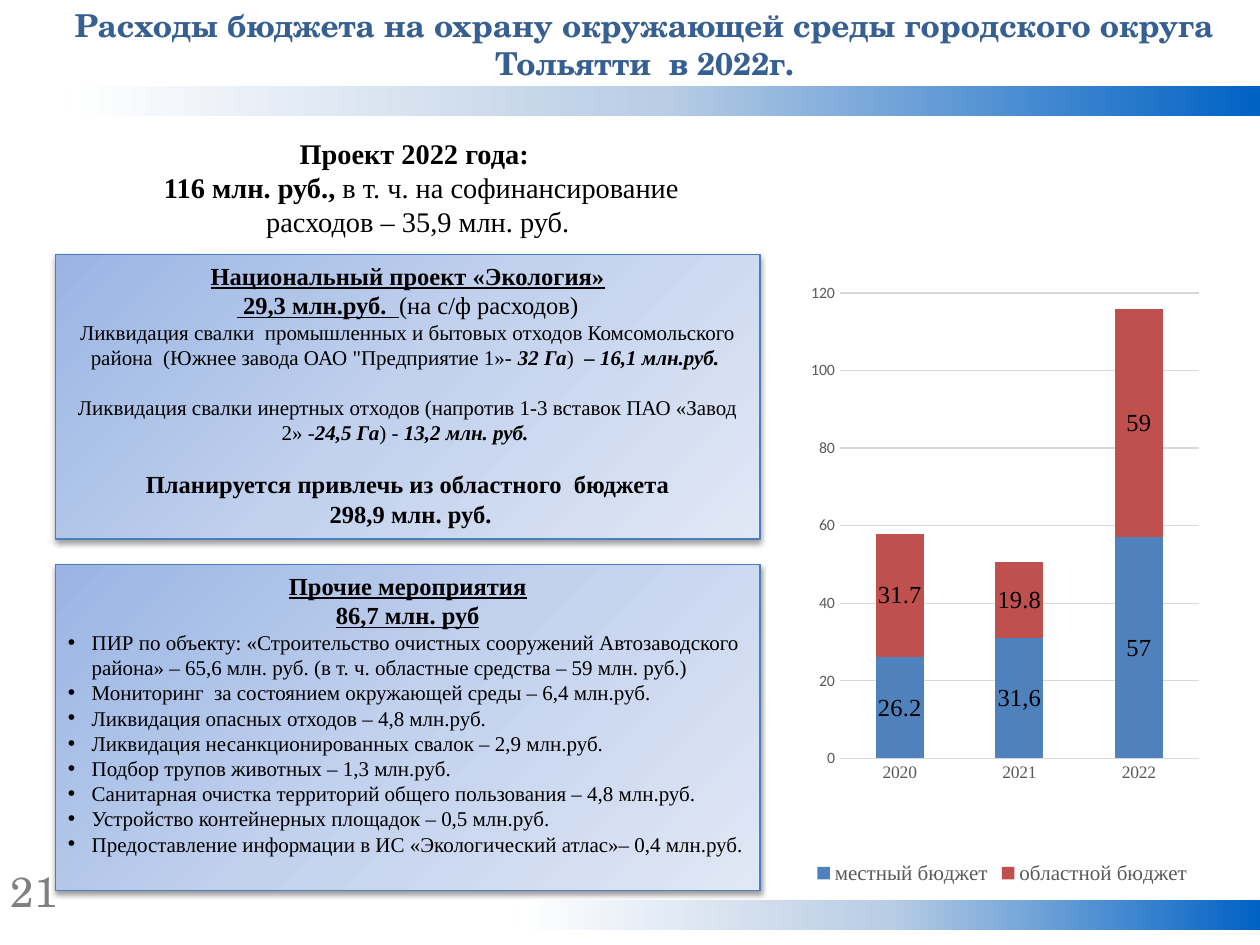
from dataclasses import dataclass
from pptx import Presentation
from pptx.chart.data import CategoryChartData
from pptx.dml.color import RGBColor
from pptx.enum.chart import XL_CHART_TYPE, XL_LABEL_POSITION, XL_LEGEND_POSITION, XL_TICK_MARK
from pptx.enum.shapes import MSO_SHAPE
from pptx.enum.text import MSO_ANCHOR, PP_ALIGN
from pptx.oxml import parse_xml
from pptx.oxml.ns import nsdecls, qn
from pptx.util import Cm, Pt


@dataclass(frozen=True)
class Theme:
    serif: str = "Times New Roman"
    school: str = "TeX Gyre Schola"
    sans: str = "Calibri"
    ink: str = "000000"
    title: str = "376092"
    page: str = "808080"
    axis: str = "595959"
    grid: str = "D9D9D9"
    edge: str = "4B7EBC"
    local: str = "4F81BD"
    region: str = "C0504D"
    band: tuple = ("0062C4", "B9CDE5", "FFFFFF")
    panel: tuple = ("9AB5E4", "C2D1ED", "E1E8F5")
    huge: float = 24
    large: float = 18
    lead: float = 16.2
    head: float = 14
    body: float = 12
    tick: float = 10
    small: float = 9


THEME = Theme()


@dataclass(frozen=True)
class Area:
    left: float
    top: float
    width: float
    height: float

    def cm(self) -> tuple:
        return Cm(self.left), Cm(self.top), Cm(self.width), Cm(self.height)


@dataclass(frozen=True)
class Run:
    text: str
    bold: bool = False
    italic: bool = False
    under: bool = False


@dataclass(frozen=True)
class Line:
    runs: tuple
    size: float = THEME.body
    font: str = THEME.serif
    color: str = THEME.ink
    center: bool = True
    bullet: bool = False
    after: float = 0


def style(font, size: float, name: str, color: str) -> None:
    font.size, font.name = Pt(size), name
    font.color.rgb = RGBColor.from_string(color)


def write(par, text: str, *, size: float, font: str, color: str,
          bold: bool = False, italic: bool = False, under: bool = False) -> None:
    run = par.add_run()
    run.text = text
    style(run.font, size, font, color)
    run.font.bold, run.font.italic, run.font.underline = bold, italic, under


def fill_text(frame, lines: tuple, anchor=MSO_ANCHOR.TOP) -> None:
    frame.word_wrap, frame.vertical_anchor = True, anchor
    for i, line in enumerate(lines):
        par = frame.add_paragraph() if i else frame.paragraphs[0]
        par.alignment = PP_ALIGN.CENTER if line.center else PP_ALIGN.LEFT
        par.space_after = Pt(line.after)
        if line.bullet:
            props = par._p.get_or_add_pPr()
            props.set("marL", str(Cm(0.48)))
            props.set("indent", str(-Cm(0.48)))
            props.append(parse_xml(f'<a:buFont {nsdecls("a")} typeface="Arial"/>'))
            props.append(parse_xml(f'<a:buChar {nsdecls("a")} char="•"/>'))
        for run in line.runs:
            write(par, run.text, size=line.size, font=line.font, color=line.color,
                  bold=run.bold, italic=run.italic, under=run.under)


def add_rect(slide, area: Area, colors: tuple, shade: str):
    rect = slide.shapes.add_shape(MSO_SHAPE.RECTANGLE, *area.cm())
    rect.shadow.inherit = False
    rect.line.fill.background()
    rect.fill.gradient()
    grad = rect._element.spPr.find(qn("a:gradFill"))
    for child in list(grad):
        grad.remove(child)
    stops = "".join(f'<a:gs pos="{i * 50000}"><a:srgbClr val="{c}"/></a:gs>'
                    for i, c in enumerate(colors))
    grad.append(parse_xml(f'<a:gsLst {nsdecls("a")}>{stops}</a:gsLst>'))
    grad.append(parse_xml(shade))
    return rect


def add_band(slide, area: Area) -> None:
    add_rect(slide, area, THEME.band, f'<a:lin {nsdecls("a")} ang="10800000" scaled="0"/>')


def add_panel(slide, area: Area, lines: tuple) -> None:
    rect = add_rect(slide, area, THEME.panel,
                    f'<a:path {nsdecls("a")} path="circle">'
                    '<a:fillToRect r="100000" b="100000"/></a:path>')
    rect.line.color.rgb = RGBColor.from_string(THEME.edge)
    rect.line.width = Pt(0.75)
    rect._element.spPr.find(qn("a:effectLst")).append(parse_xml(
        f'<a:outerShdw {nsdecls("a")} blurRad="40000" dist="20000" dir="5400000" rotWithShape="0">'
        '<a:srgbClr val="000000"><a:alpha val="38000"/></a:srgbClr></a:outerShdw>'))
    fill_text(rect.text_frame, lines)


def add_text(slide, area: Area, *lines: Line, anchor=MSO_ANCHOR.TOP) -> None:
    fill_text(slide.shapes.add_textbox(*area.cm()).text_frame, lines, anchor)


def add_graph(slide, area: Area) -> None:
    data = CategoryChartData()
    data.categories = ["2020", "2021", "2022"]
    data.add_series("местный бюджет", (26.2, 30.9, 57))
    data.add_series("областной бюджет", (31.7, 19.8, 59))
    chart = slide.shapes.add_chart(XL_CHART_TYPE.COLUMN_STACKED, *area.cm(), data).chart
    style(chart.font, THEME.tick, THEME.sans, THEME.ink)
    chart.has_title = False
    chart.has_legend = True
    chart.legend.position = XL_LEGEND_POSITION.BOTTOM
    chart.legend.include_in_layout = False
    style(chart.legend.font, THEME.body, THEME.serif, THEME.axis)
    grid = RGBColor.from_string(THEME.grid)
    cats, vals = chart.category_axis, chart.value_axis
    style(cats.tick_labels.font, THEME.tick, THEME.serif, THEME.axis)
    style(vals.tick_labels.font, THEME.small, THEME.sans, THEME.axis)
    for axis in (cats, vals):
        axis.major_tick_mark = axis.minor_tick_mark = XL_TICK_MARK.NONE
    vals.minimum_scale, vals.maximum_scale, vals.major_unit = 0, 120, 20
    vals.format.line.fill.background()
    for edge in (cats.format.line, vals.major_gridlines.format.line):
        edge.color.rgb, edge.width = grid, Pt(0.75)
    plot = chart.plots[0]
    plot.gap_width, plot.overlap, plot.vary_by_categories = 150, 100, False
    for series, color in zip(plot.series, (THEME.local, THEME.region)):
        series.format.fill.solid()
        series.format.fill.fore_color.rgb = RGBColor.from_string(color)
        labels = series.data_labels
        labels.show_value, labels.position = True, XL_LABEL_POSITION.CENTER
        style(labels.font, THEME.head, THEME.serif, THEME.ink)
    label = plot.series[0].points[1].data_label
    write(label.text_frame.paragraphs[0], "31,6", size=THEME.head, font=THEME.serif, color=THEME.ink)
    label.position = XL_LABEL_POSITION.CENTER
    spots = "".join(f'<c:{k} val="{v}"/>' for k, v in (
        ("layoutTarget", "inner"), ("xMode", "edge"), ("yMode", "edge"),
        ("x", 0.12), ("y", 0.09), ("w", 0.84), ("h", 0.71)))
    area_xml = chart._chartSpace.chart.plotArea
    for old in area_xml.findall(qn("c:layout")):
        area_xml.remove(old)
    area_xml.insert(0, parse_xml(
        f'<c:layout {nsdecls("c")}><c:manualLayout>{spots}</c:manualLayout></c:layout>'))


def head(text: str, under: bool = False) -> Line:
    return Line((Run(text, bold=True, under=under),), THEME.head)


ECO = (
    head("Национальный проект «Экология»", True),
    Line((Run(" 29,3 млн.руб.  ", True, under=True), Run("(на с/ф расходов)")), THEME.head),
    Line((Run("Ликвидация свалки  промышленных и бытовых отходов Комсомольского района  "
              "(Южнее завода ОАО \"Предприятие 1»- "), Run("32 Га", True, True), Run(")  "),
          Run("– 16,1 млн.руб. ", True, True)), after=14),
    Line((Run("Ликвидация свалки инертных отходов (напротив 1-3 вставок ПАО «Завод 2» -"),
          Run("24,5 Га", True, True), Run(") - "), Run("13,2 млн. руб. ", True, True)), after=14),
    head("Планируется привлечь из областного  бюджета"),
    head(" 298,9 млн. руб."),
)
TASKS = (
    "ПИР по объекту: «Строительство очистных сооружений Автозаводского района» – 65,6 млн. руб. "
    "(в т. ч. областные средства – 59 млн. руб.)",
    "Мониторинг  за состоянием окружающей среды – 6,4 млн.руб.",
    "Ликвидация опасных отходов – 4,8 млн.руб.",
    "Ликвидация несанкционированных свалок – 2,9 млн.руб.",
    "Подбор трупов животных – 1,3 млн.руб.",
    "Санитарная очистка территорий общего пользования – 4,8 млн.руб.",
    "Устройство контейнерных площадок – 0,5 млн.руб.",
    "Предоставление информации в ИС «Экологический атлас»– 0,4 млн.руб.",
)
OTHER = (head("Прочие мероприятия", True), head("86,7 млн. руб", True),
         *(Line((Run(task),), center=False, bullet=True) for task in TASKS))


def main() -> None:
    deck = Presentation()
    deck.slide_width, deck.slide_height = Cm(25.4), Cm(19.05)
    slide = deck.slides.add_slide(deck.slide_layouts[6])
    add_band(slide, Area(1.3, 1.73, 24.1, 0.61))
    add_band(slide, Area(10.41, 18.14, 14.99, 0.61))
    add_text(slide, Area(0.89, 0, 24.21, 1.8),
             Line((Run("Расходы бюджета на охрану окружающей среды городского округа "
                       "Тольятти  в 2022г.", True),), THEME.large, THEME.school, THEME.title))
    add_text(slide, Area(2.49, 2.36, 11.86, 2.84),
             Line((Run("Проект 2022 года: ", True),), THEME.lead),
             Line((Run(" 116 млн. руб., ", True),
                   Run("в т. ч. на софинансирование расходов – 35,9 млн. руб.")), THEME.lead),
             anchor=MSO_ANCHOR.MIDDLE)
    add_panel(slide, Area(1.12, 5.13, 14.2, 5.74), ECO)
    add_panel(slide, Area(1.12, 11.38, 14.2, 6.58), OTHER)
    add_graph(slide, Area(15.9, 4.72, 8.61, 13.21))
    add_text(slide, Area(-0.03, 17.32, 1.7, 1.27),
             Line((Run("21"),), THEME.huge, THEME.school, THEME.page, center=False))
    deck.save("out.pptx")


if __name__ == "__main__":
    main()
